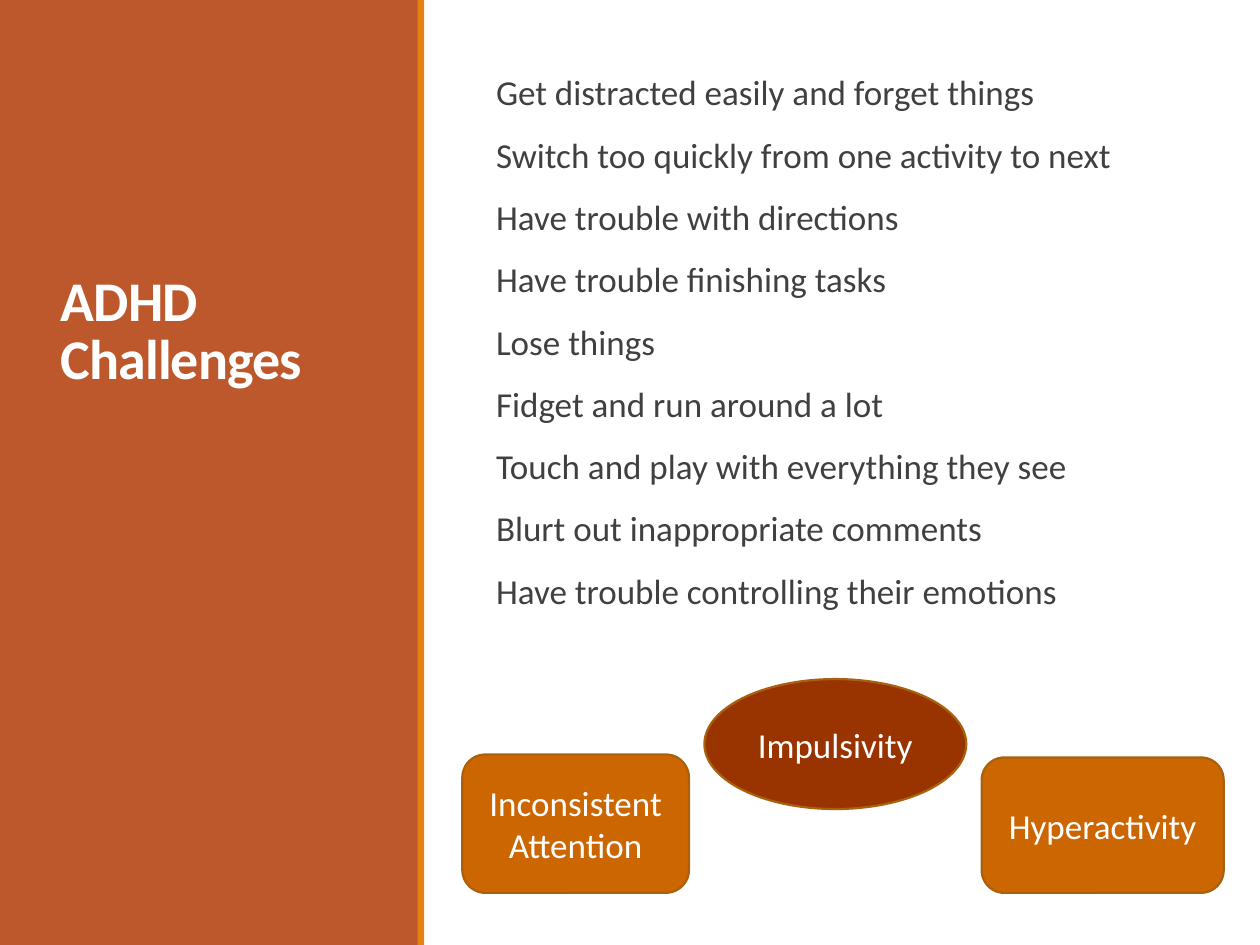
from pptx import Presentation
from pptx.dml.color import RGBColor as Rgb
from pptx.enum.shapes import MSO_SHAPE as Kind
from pptx.enum.text import MSO_ANCHOR as Anchor, PP_ALIGN as Align
from pptx.util import Cm, Pt

FONT = "Calibri"
COLORS = {
    "panel": "BD582C",
    "stripe": "E48312",
    "box": "CC6600",
    "oval": "993300",
    "edge": "A9610D",
    "white": "FFFFFF",
    "text": "404040",
}
SIGNS = [
    "Get distracted easily and forget things",
    "Switch too quickly from one activity to next",
    "Have trouble with directions",
    "Have trouble finishing tasks",
    "Lose things",
    "Fidget and run around a lot",
    "Touch and play with everything they see",
    "Blurt out inappropriate comments",
    "Have trouble controlling their emotions",
]
# Kind, fill, label, then left, top, width and height in cm
TRAITS = [
    (Kind.ROUNDED_RECTANGLE, "box", "Inconsistent Attention", (9.32, 15.21, 4.57, 2.79)),
    (Kind.ROUNDED_RECTANGLE, "box", "Hyperactivity", (19.79, 15.27, 4.88, 2.73)),
    (Kind.OVAL, "oval", "Impulsivity", (14.2, 13.69, 5.28, 2.62)),
]


def color(name):
    return Rgb.from_string(COLORS[name])


def add_run(para, text, size, tint, bold=False):
    run = para.add_run()
    run.text = text
    font = run.font
    font.name, font.size, font.bold = FONT, Pt(size), bold
    font.color.rgb = color(tint)
    return run


def add_form(slide, kind, fill, area):
    form = slide.shapes.add_shape(kind, *map(Cm, area))
    form.shadow.inherit = False
    form.fill.solid()
    form.fill.fore_color.rgb = color(fill)
    form.line.fill.background()
    return form


def add_frame(slide, area):
    frame = slide.shapes.add_textbox(*map(Cm, area)).text_frame
    frame.word_wrap = True
    return frame


def add_title(slide, lines):
    frame = add_frame(slide, (0.97, 1.65, 6.65, 6.35))
    frame.vertical_anchor = Anchor.BOTTOM
    para = frame.paragraphs[0]
    para.line_spacing = 0.85
    for i, line in enumerate(lines):
        if i:
            para.add_line_break()
        run = add_run(para, line, 32, "white", bold=True)
        run.font._element.set("spc", "-50")


def add_list(slide, items):
    frame = add_frame(slide, (9.75, 1.4, 13.92, 14.6))
    frame.margin_left, frame.margin_right = Cm(0.25), 0
    for i, item in enumerate(items):
        para = frame.add_paragraph() if i else frame.paragraphs[0]
        para.line_spacing = 0.9
        para.space_before = Pt(12 if i else 0)
        para.space_after = Pt(2)
        add_run(para, item, 20, "text")


def add_trait(slide, kind, fill, label, area):
    form = add_form(slide, kind, fill, area)
    form.line.color.rgb = color("edge")
    form.line.width = Pt(1.25)
    frame = form.text_frame
    frame.word_wrap = True
    frame.vertical_anchor = Anchor.MIDDLE
    para = frame.paragraphs[0]
    para.alignment = Align.CENTER
    add_run(para, label, 20, "white")


def main():
    deck = Presentation()
    deck.slide_width, deck.slide_height = Cm(25.4), Cm(19.05)
    slide = deck.slides.add_slide(deck.slide_layouts[6])

    # Side panel with its stripe
    add_form(slide, Kind.RECTANGLE, "panel", (0, 0, 8.43, 19.05))
    add_form(slide, Kind.RECTANGLE, "stripe", (8.42, 0, 0.13, 19.05))
    add_title(slide, ["ADHD", "Challenges"])

    # Challenges
    add_list(slide, SIGNS)

    # Core traits
    for trait in TRAITS:
        add_trait(slide, *trait)

    deck.save("out.pptx")


if __name__ == "__main__":
    main()
